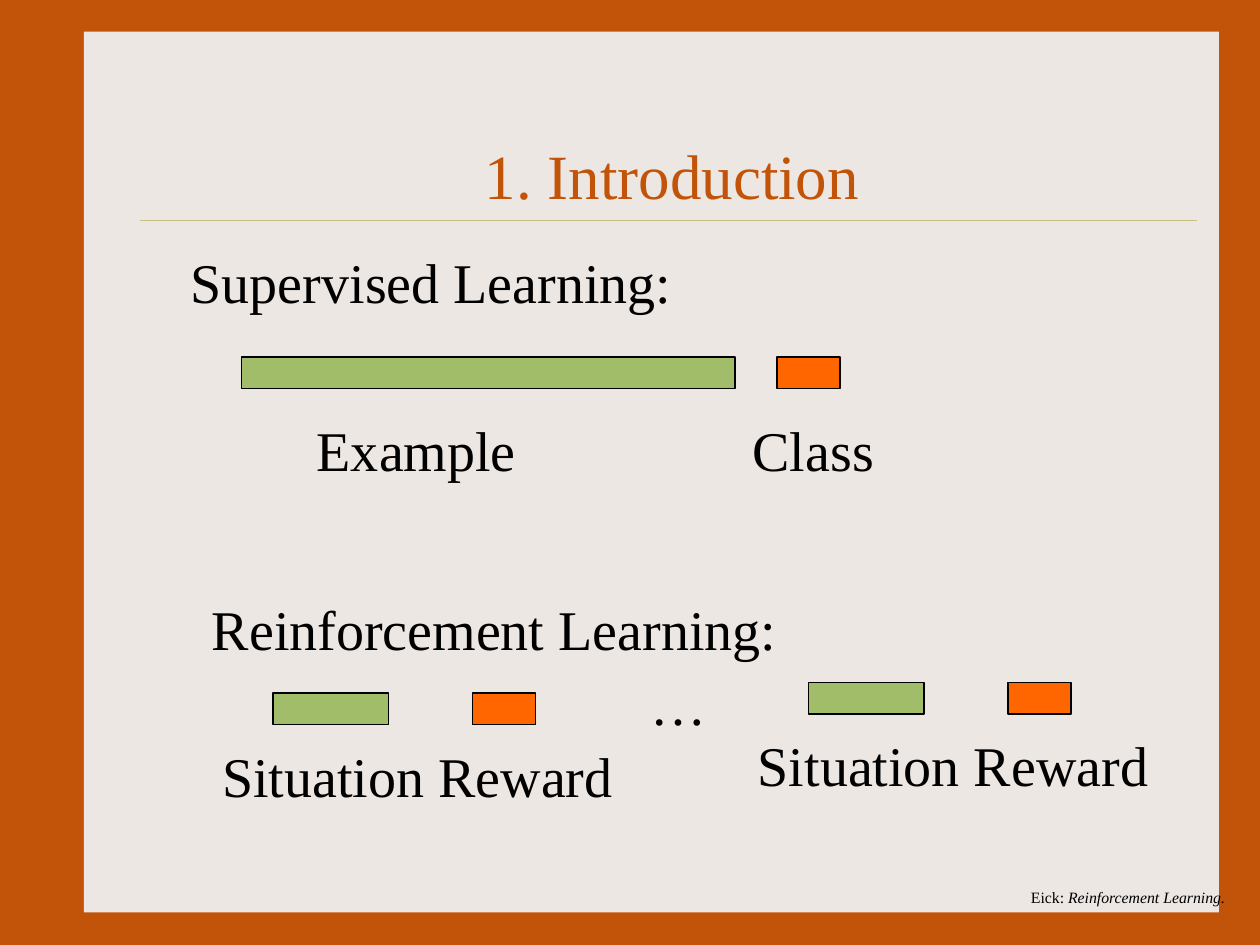
from lxml import etree
from pptx import Presentation, util as u
from pptx.dml.color import RGBColor
from pptx.enum import shapes, text
from pptx.oxml.ns import qn

COLS, ROWS = 120, 90  # grid of twelfths of an inch
UNIT = u.Inches(10) // COLS
FONT = "Times New Roman"
HUES = {
    "frame": "C2540A",
    "panel": "EDE7E3",
    "rule": "CBBD83",
    "ink": "000000",
    "green": "A1BD69",
    "orange": "FF6600",
}


def hue(name):
    return RGBColor.from_string(HUES[name])


def grid(*vals):
    return [round(v * UNIT) for v in vals]


def add_bar(slide, col, row, wide, high, fill, edge=None):
    bar = slide.shapes.add_shape(
        shapes.MSO_SHAPE.RECTANGLE, *grid(col, row, wide, high))
    bar.shadow.inherit = False
    bar.fill.solid()
    bar.fill.fore_color.rgb = hue(fill)
    if edge:
        bar.line.color.rgb = hue(edge)
        bar.line.width = u.Pt(0.75)
    else:
        bar.line.fill.background()


def add_rule(slide, left, right, row):
    rule = slide.shapes.add_connector(
        shapes.MSO_CONNECTOR.STRAIGHT, *grid(left, row, right, row))
    rule.line.color.rgb = hue("rule")
    rule.line.width = u.Pt(0.25)
    etree.SubElement(rule._element.spPr, qn("a:effectLst"))


def add_label(slide, col, row, wide, high, words, size=32, ink="ink", tab=None):
    """Add one line of text; tab is a tab stop in grid columns."""
    box = slide.shapes.add_textbox(*grid(col, row, wide, high))
    frame = box.text_frame
    frame.word_wrap = False
    para = frame.paragraphs[0]
    if tab:
        stops = etree.SubElement(para._p.get_or_add_pPr(), qn("a:tabLst"))
        etree.SubElement(stops, qn("a:tab"), pos=str(grid(tab)[0]), algn="l")
    para.font.name = FONT
    para.font.size = u.Pt(size)
    para.font.color.rgb = hue(ink)
    para.add_run().text = words
    return frame


def add_pair(slide, col, row):
    """Add a situation bar, a reward bar and their caption."""
    add_bar(slide, col + 6, row, 11, 3, "green", "ink")
    add_bar(slide, col + 25, row, 6, 3, "orange", "ink")
    add_label(slide, col, row + 4, 39.6, 7.5, "Situation Reward")


def add_base(slide):
    slide.background.fill.solid()
    slide.background.fill.fore_color.rgb = hue("frame")
    add_bar(slide, 8, 3, 108.1, 83.9, "panel")
    add_rule(slide, 13.3, 114, 21)
    foot = add_label(slide, 97, 84, 21, 3, "Eick: ", 9)
    book = foot.paragraphs[0].add_run()
    book.text = "Reinforcement Learning."
    book.font.italic = True


def add_title(slide, words):
    frame = add_label(slide, 14, 13.3, 100, 6.7, words, 36, "frame")
    frame.word_wrap = True
    frame.vertical_anchor = text.MSO_ANCHOR.MIDDLE
    frame.paragraphs[0].alignment = text.PP_ALIGN.CENTER


def main():
    deck = Presentation()
    deck.slide_width, deck.slide_height = grid(COLS, ROWS)
    slide = deck.slides.add_slide(deck.slide_layouts[6])
    add_base(slide)
    add_title(slide, "1. Introduction")

    add_label(slide, 17, 23, 48.2, 14, "Supervised Learning:")
    add_bar(slide, 23, 34, 47, 3, "green", "ink")
    add_bar(slide, 74, 34, 6, 3, "orange", "ink")
    add_label(slide, 29, 39, 55.7, 7.5, "Example\tClass", tab=41.5)

    add_label(slide, 19, 56, 56.2, 14, "Reinforcement Learning:")
    add_pair(slide, 20, 66)
    add_pair(slide, 71, 65)
    add_label(slide, 60.8, 63.2, 7.8, 7.5, "…")
    deck.save("out.pptx")


if __name__ == "__main__":
    main()
